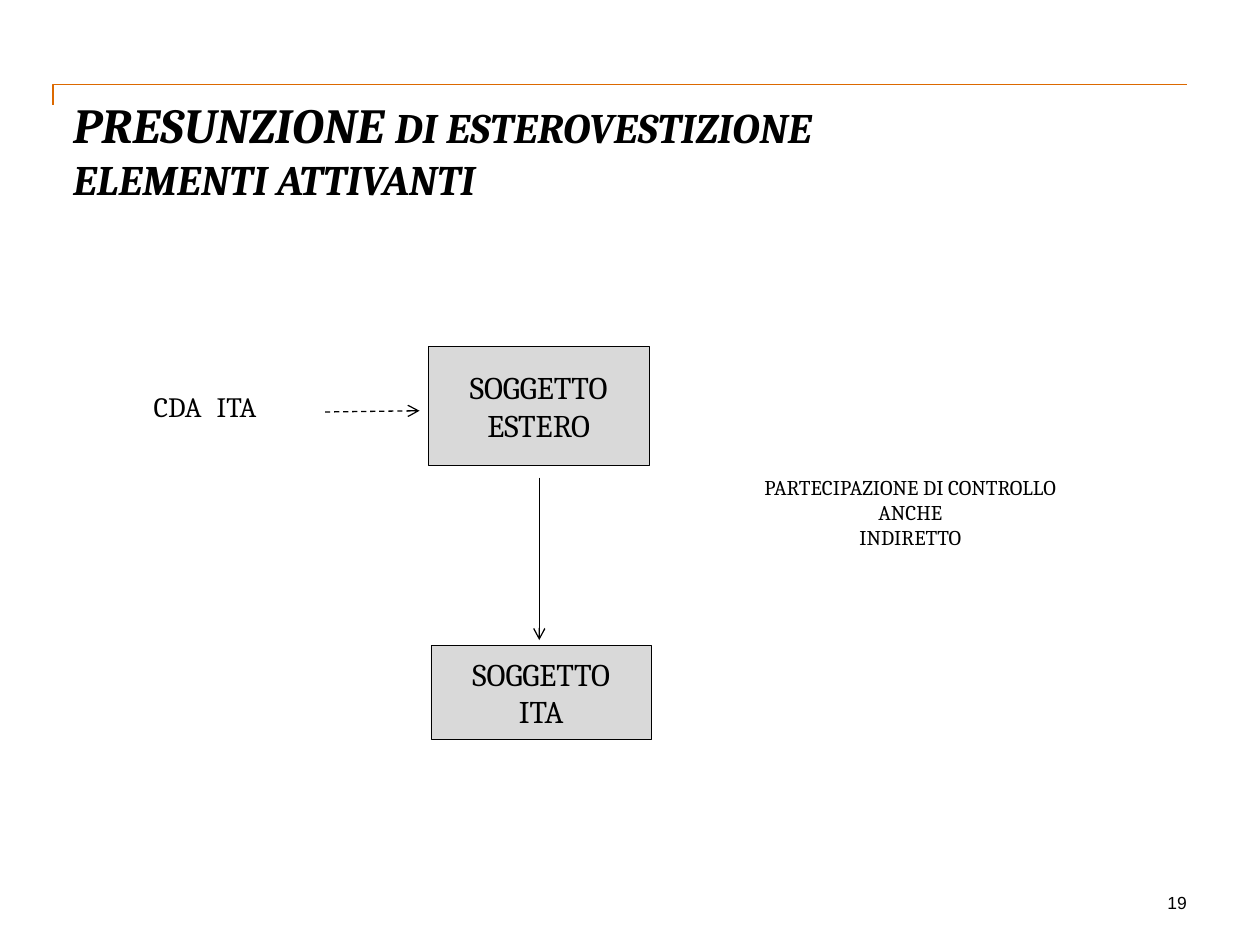
from dataclasses import dataclass

from lxml.etree import SubElement
from pptx import Presentation
from pptx.dml.color import RGBColor
from pptx.enum.dml import MSO_LINE
from pptx.enum.shapes import MSO_CONNECTOR, MSO_SHAPE
from pptx.enum.text import MSO_ANCHOR, MSO_AUTO_SIZE, PP_ALIGN
from pptx.oxml.ns import qn
from pptx.util import Inches, Pt


@dataclass(frozen=True)
class Theme:
    ink: RGBColor = RGBColor(0, 0, 0)
    accent: RGBColor = RGBColor(0xDC, 0x69, 0x00)
    box: RGBColor = RGBColor(0xD9, 0xD9, 0xD9)
    serif: str = "Cambria"
    sans: str = "Arial"
    title: int = 28
    subtitle: int = 24
    entity: int = 18
    body: int = 16
    note: int = 12
    number: int = 10


@dataclass(frozen=True)
class Box:
    left: float
    top: float
    width: float
    height: float

    def lengths(self) -> list:
        return [Inches(v) for v in (self.left, self.top, self.width, self.height)]


@dataclass(frozen=True)
class Entity:
    text: str
    box: Box


@dataclass(frozen=True)
class Arrow:
    start: tuple[float, float]
    end: tuple[float, float]
    dashed: bool = False


T = Theme()

ENTITIES = [
    Entity("SOGGETTO\nESTERO", Box(3.4, 2.75, 1.75, 0.94)),
    Entity("SOGGETTO\nITA", Box(3.42, 5.12, 1.75, 0.75)),
]
ARROWS = [
    Arrow((4.28, 3.79), (4.28, 5.08)),
    Arrow((2.58, 3.27), (3.33, 3.26), dashed=True),
]


def format_run(r, size: int, font: str = T.serif) -> None:
    r.font.size = Pt(size)
    r.font.name = font
    r.font.color.rgb = T.ink


def set_text(sp, text: str, size: int, align, font: str = T.serif) -> None:
    tf = sp.text_frame
    tf.word_wrap = True
    tf.text = text
    for p in tf.paragraphs:
        p.alignment = align
        for r in p.runs:
            format_run(r, size, font)


def set_insets(tf, left: float = 0, top: float = 0) -> None:
    tf.auto_size = MSO_AUTO_SIZE.NONE
    tf.vertical_anchor = MSO_ANCHOR.TOP
    tf.margin_left, tf.margin_top = Inches(left), Inches(top)
    tf.margin_right = tf.margin_bottom = 0


def place(sp, box: Box) -> None:
    sp.left, sp.top, sp.width, sp.height = box.lengths()


def add_rule(s) -> None:
    left, right, top, bottom = (Inches(v) for v in (0.42, 9.42, 0.67, 0.83))
    fb = s.shapes.build_freeform(left, bottom)
    fb.add_line_segments([(left, top), (right, top)], close=False)
    sp = fb.convert_to_shape()
    sp.shadow.inherit = False
    sp.fill.background()
    sp.line.color.rgb = T.accent
    sp.line.width = Pt(1)


def add_title(s) -> None:
    sp = s.shapes.title
    place(sp, Box(0.58, 0.75, 8.83, 1))
    tf = sp.text_frame
    set_insets(tf)
    tf.text = "PRESUNZIONE \nELEMENTI ATTIVANTI"
    first, second = tf.paragraphs
    first.add_run().text = "DI ESTEROVESTIZIONE"
    sizes = (T.title, T.subtitle, T.subtitle)
    for r, size in zip([*first.runs, *second.runs], sizes):
        format_run(r, size)
        r.font.bold = r.font.italic = True
    for p in tf.paragraphs:
        p.alignment = PP_ALIGN.LEFT


def add_board(s) -> None:
    sp = s.placeholders[1]
    place(sp, Box(0.64, 1.92, 8.76, 4.85))
    set_text(sp, "CDA\tITA", T.body, PP_ALIGN.LEFT)
    set_insets(sp.text_frame, left=0.58, top=1.17)
    p = sp.text_frame.paragraphs[0]
    p.space_before = Pt(0)
    pPr = p._p.get_or_add_pPr()
    pPr.set("marL", "0")
    pPr.set("indent", "0")
    SubElement(pPr, qn("a:buNone"))
    tabs = SubElement(pPr, qn("a:tabLst"))
    SubElement(tabs, qn("a:tab"), pos=str(Inches(0.56)), algn="l")


def add_entity(s, entity: Entity) -> None:
    sp = s.shapes.add_shape(MSO_SHAPE.RECTANGLE, *entity.box.lengths())
    sp.shadow.inherit = False
    sp.fill.solid()
    sp.fill.fore_color.rgb = T.box
    sp.line.color.rgb = T.ink
    sp.line.width = Pt(0.25)
    set_text(sp, entity.text, T.entity, PP_ALIGN.CENTER)
    sp.text_frame.vertical_anchor = MSO_ANCHOR.MIDDLE


def add_arrow(s, arrow: Arrow) -> None:
    ends = [Inches(v) for v in (*arrow.start, *arrow.end)]
    cxn = s.shapes.add_connector(MSO_CONNECTOR.STRAIGHT, *ends)
    cxn.line.color.rgb = T.ink
    cxn.line.width = Pt(0.75)
    if arrow.dashed:
        cxn.line.dash_style = MSO_LINE.DASH
    spPr = cxn._element.spPr
    SubElement(spPr.find(qn("a:ln")), qn("a:tailEnd"), type="arrow")
    SubElement(spPr, qn("a:effectLst"))


def add_note(s) -> None:
    sp = s.shapes.add_textbox(*Box(5.83, 3.69, 2.79, 0.75).lengths())
    set_text(sp, "PARTECIPAZIONE DI CONTROLLO ANCHE\nINDIRETTO", T.note, PP_ALIGN.CENTER)
    sp.text_frame.vertical_anchor = MSO_ANCHOR.MIDDLE


def add_number(s) -> None:
    sp = s.shapes.add_textbox(*Box(7.75, 7.08, 1.67, 0.17).lengths())
    set_text(sp, "19", T.number, PP_ALIGN.RIGHT, T.sans)
    set_insets(sp.text_frame)


def main() -> None:
    prs = Presentation()
    prs.slide_width, prs.slide_height = Inches(10), Inches(7.5)
    s = prs.slides.add_slide(prs.slide_layouts[1])
    add_rule(s)
    add_title(s)
    add_board(s)
    for entity in ENTITIES:
        add_entity(s, entity)
    for arrow in ARROWS:
        add_arrow(s, arrow)
    add_note(s)
    add_number(s)
    prs.save("out.pptx")


if __name__ == "__main__":
    main()
